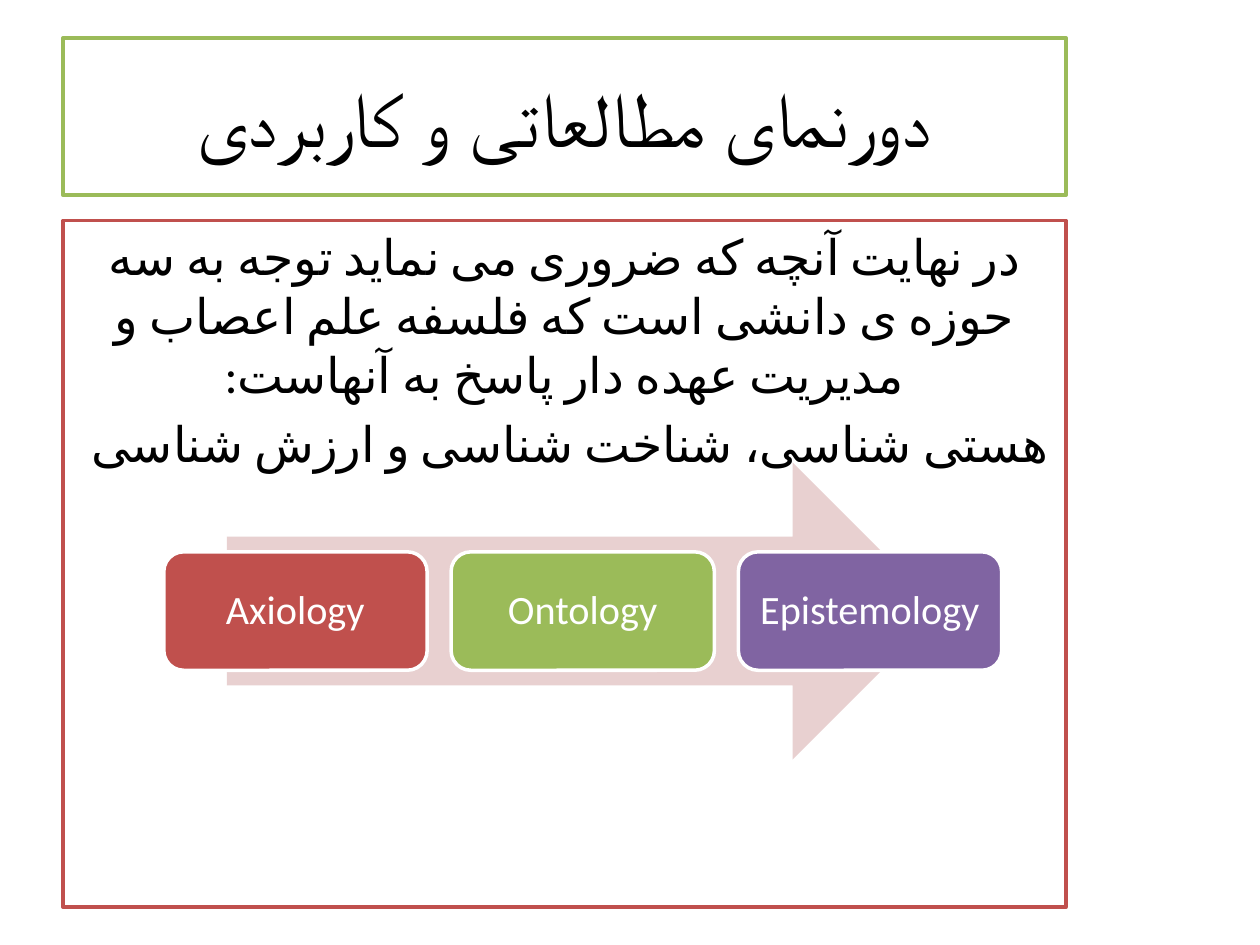
from dataclasses import dataclass

from lxml.etree import SubElement
from pptx import Presentation
from pptx.dml.color import RGBColor
from pptx.enum.lang import MSO_LANGUAGE_ID
from pptx.enum.shapes import MSO_SHAPE
from pptx.enum.text import MSO_ANCHOR, PP_ALIGN
from pptx.oxml.ns import qn
from pptx.shapes.autoshape import Shape
from pptx.slide import Slide
from pptx.util import Inches, Pt

COLORS = {
    "white": "FFFFFF",
    "black": "000000",
    "red": "C0504D",
    "green": "9BBB59",
    "purple": "8064A2",
    "pale red": "E8D0D0",
}

SLIDE_WIDTH, SLIDE_HEIGHT = 10, 7.5
PANEL_LEFT, PANEL_WIDTH = 0.5, 7.96
CARD_LEFT, CARD_TOP = 1.3, 4.38
CARD_WIDTH, CARD_HEIGHT = 2.09, 0.94
CARD_STEP = CARD_WIDTH + 0.19


@dataclass(frozen=True)
class Box:
    left: float
    top: float
    width: float
    height: float


@dataclass(frozen=True)
class Card:
    column: int
    label: str
    color: str


CARDS = (
    Card(0, "Axiology", "red"),
    Card(1, "Ontology", "green"),
    Card(2, "Epistemology", "purple"),
)


def rgb(name: str) -> RGBColor:
    return RGBColor.from_string(COLORS[name])


def add_block(slide: Slide, kind: MSO_SHAPE, box: Box, fill: str,
              line: str | None = None) -> Shape:
    shape = slide.shapes.add_shape(
        kind, Inches(box.left), Inches(box.top), Inches(box.width), Inches(box.height))
    shape.shadow.inherit = False
    shape.fill.solid()
    shape.fill.fore_color.rgb = rgb(fill)
    if line:
        shape.line.color.rgb = rgb(line)
        shape.line.width = Pt(2)
    else:
        shape.line.fill.background()
    return shape


def write_text(shape: Shape, *texts: str, size: float, font: str = "Calibri",
               color: str = "black", anchor: MSO_ANCHOR = MSO_ANCHOR.MIDDLE,
               gap: float = 0, line_spacing: float = 1, inset: float = 0.05,
               language: MSO_LANGUAGE_ID = MSO_LANGUAGE_ID.FARSI) -> None:
    """Write centred right-to-left paragraphs; gap is the points between them."""
    frame = shape.text_frame
    frame.word_wrap = True
    frame.vertical_anchor = anchor
    frame.margin_left = frame.margin_right = Inches(0.1)
    frame.margin_top = frame.margin_bottom = Inches(inset)
    for index, text in enumerate(texts):
        paragraph = frame.add_paragraph() if index else frame.paragraphs[0]
        paragraph.alignment = PP_ALIGN.CENTER
        paragraph.line_spacing = line_spacing
        paragraph.space_before = Pt(gap if index else 0)
        paragraph._p.get_or_add_pPr().set("rtl", "1")
        run = paragraph.add_run()
        run.text = text
        run.font.size = Pt(size)
        run.font.name = font
        run.font.language_id = language
        run.font.color.rgb = rgb(color)
        SubElement(run._r.get_or_add_rPr(), qn("a:cs"), typeface=font)


def add_card(slide: Slide, card: Card) -> None:
    box = Box(CARD_LEFT + card.column * CARD_STEP, CARD_TOP, CARD_WIDTH, CARD_HEIGHT)
    shape = add_block(slide, MSO_SHAPE.ROUNDED_RECTANGLE, box, card.color, "white")
    write_text(shape, card.label, size=23, color="white", line_spacing=0.9, inset=0.1,
               language=MSO_LANGUAGE_ID.ENGLISH_US)


def main() -> None:
    presentation = Presentation()
    presentation.slide_width = Inches(SLIDE_WIDTH)
    presentation.slide_height = Inches(SLIDE_HEIGHT)
    slide = presentation.slides.add_slide(presentation.slide_layouts[6])

    title = add_block(slide, MSO_SHAPE.RECTANGLE,
                      Box(PANEL_LEFT, 0.3, PANEL_WIDTH, 1.25), "white", "green")
    write_text(title, "دورنمای مطالعاتی و کاربردی", size=44, font="Times New Roman")

    body = add_block(slide, MSO_SHAPE.RECTANGLE,
                     Box(PANEL_LEFT, 1.75, PANEL_WIDTH, 5.45), "white", "red")
    write_text(
        body,
        "در نهایت آنچه که ضروری می نماید توجه به سه حوزه ی دانشی است که "
        "فلسفه علم اعصاب و مدیریت عهده دار پاسخ به آنهاست:",
        "هستی شناسی، شناخت شناسی و ارزش شناسی ",
        size=28, anchor=MSO_ANCHOR.TOP, gap=5.6)

    add_block(slide, MSO_SHAPE.RIGHT_ARROW, Box(1.8, 3.67, 5.67, 2.36), "pale red")
    for card in CARDS:
        add_card(slide, card)

    presentation.save("out.pptx")


if __name__ == "__main__":
    main()
